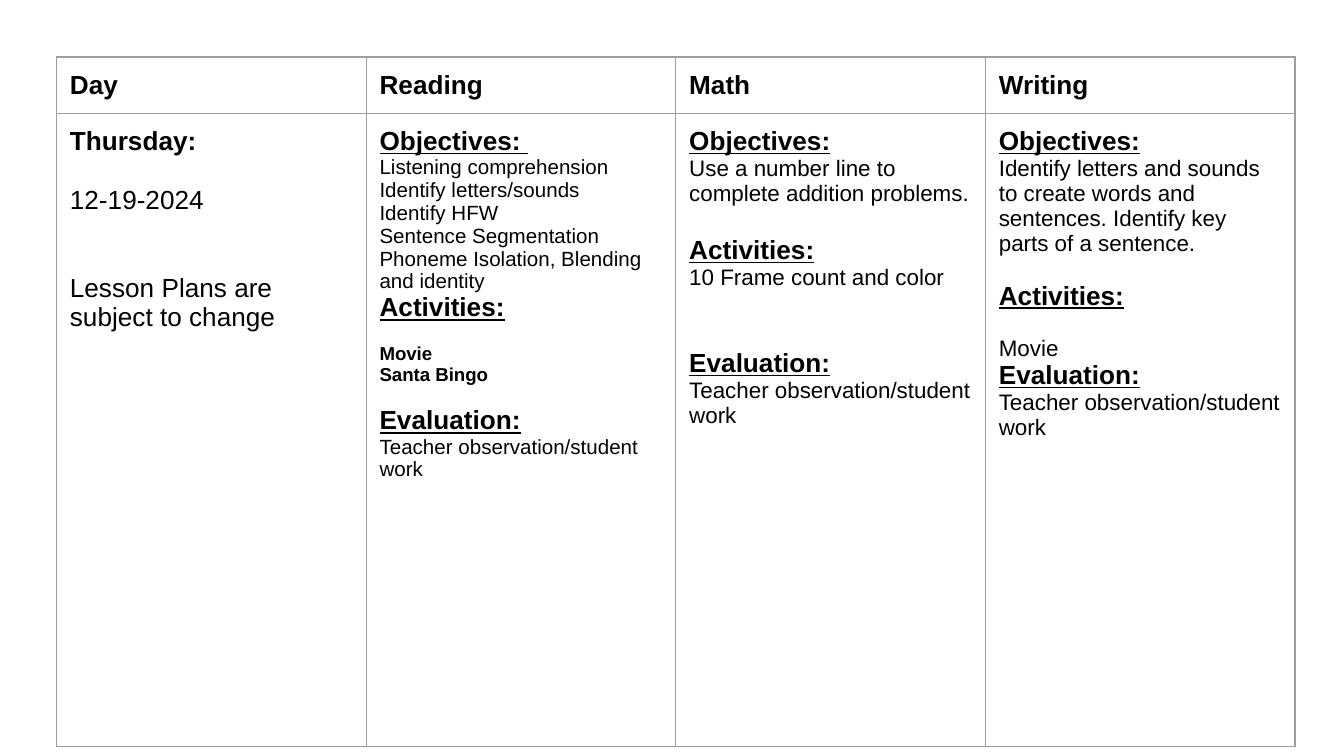
from lxml.etree import SubElement
from pptx import Presentation
from pptx.dml.color import RGBColor as Rgb
from pptx.enum.text import MSO_ANCHOR as Anchor, PP_ALIGN as Align
from pptx.oxml import parse_xml
from pptx.oxml.ns import nsdecls, qn
from pptx.util import Inches, Pt

# A 16:9 page, divided into a fine grid of square units
PAGE_WIDTH = Inches(10)
PAGE_HEIGHT = PAGE_WIDTH * 9 // 16
GRID_COLUMNS = 1000
GRID_ROWS = GRID_COLUMNS * 9 / 16

# Text formats by role
FORMATS = {
    "title": {"size": Pt(14), "bold": True, "underline": False},
    "section": {"size": Pt(14), "bold": True, "underline": True},
    "note": {"size": Pt(14), "bold": False, "underline": False},
    "body": {"size": Pt(12), "bold": False, "underline": False},
    "small": {"size": Pt(11), "bold": False, "underline": False},
    "activity": {"size": Pt(10), "bold": True, "underline": False},
}


def hex_color(value):
    return Rgb.from_string(value)


def gap(*sizes):
    """Height in points of skipped lines of the given text sizes."""
    return round(1.12 * sum(sizes), 1)


class LessonPage:
    font = "Arial"
    ink = "000000"
    rule = "9E9E9E"
    rule_width = Pt(0.75)
    inset = Inches(0.1)

    def __init__(self, deck):
        self.slide = deck.slides.add_slide(deck.slide_layouts[6])

    def across(self, units):
        return round(PAGE_WIDTH * units / GRID_COLUMNS)

    def down(self, units):
        return round(PAGE_HEIGHT * units / GRID_ROWS)

    def table(self, left, top, column_width, row_heights, content):
        columns = len(content[0])
        plan = self.slide.shapes.add_table(
            len(content), columns, self.across(left), self.down(top),
            self.across(column_width * columns), self.down(sum(row_heights))).table
        plan.first_row = plan.horz_banding = False
        for column in plan.columns:
            column.width = self.across(column_width)
        for row, height, entries in zip(plan.rows, row_heights, content):
            row.height = self.down(height)
            for cell, lines in zip(row.cells, entries):
                self.cell(cell, lines)

    def cell(self, cell, lines):
        cell.fill.background()
        for side in ("left", "right", "top", "bottom"):
            setattr(cell, f"margin_{side}", self.inset)
        cell.vertical_anchor = Anchor.TOP
        self.borders(cell)
        frame = cell.text_frame
        for index, line in enumerate(lines):
            paragraph = frame.add_paragraph() if index else frame.paragraphs[0]
            self.line(paragraph, *line)

    def line(self, paragraph, role, text, space_before=0):
        paragraph.alignment = Align.LEFT
        paragraph.space_before = Pt(space_before)
        run = paragraph.add_run()
        run.text = text
        run.font.name = self.font
        run.font.color.rgb = hex_color(self.ink)
        for name, value in FORMATS[role].items():
            setattr(run.font, name, value)

    def borders(self, cell):
        properties = cell._tc.get_or_add_tcPr()
        for index, side in enumerate("LRTB"):
            edge = parse_xml(f'<a:ln{side} {nsdecls("a")} w="{self.rule_width}"/>')
            fill = SubElement(edge, qn("a:solidFill"))
            SubElement(fill, qn("a:srgbClr"), val=self.rule)
            properties.insert(index, edge)


# Wording of each column: role, text, space before
SUBJECTS = ["Day", "Reading", "Math", "Writing"]
OBJECTIVES = ("section", "Objectives:")
ACTIVITIES, EVALUATION = "Activities:", "Evaluation:"
OBSERVATION = "Teacher observation/student work"

day = [
    ("title", "Thursday:"),
    ("note", "12-19-2024", gap(14)),
    ("note", "Lesson Plans are subject to change", gap(14, 14)),
]
reading = [
    ("section", "Objectives: "),
    *[("small", goal) for goal in (
        "Listening comprehension", "Identify letters/sounds", "Identify HFW",
        "Sentence Segmentation", "Phoneme Isolation, Blending and identity")],
    ("section", ACTIVITIES),
    ("activity", "Movie", gap(10)),
    ("activity", "Santa Bingo"),
    ("section", EVALUATION, gap(10)),
    ("small", OBSERVATION),
]
math = [
    OBJECTIVES,
    ("body", "Use a number line to complete addition problems."),
    ("section", ACTIVITIES, gap(14)),
    ("body", "10 Frame count and color"),
    ("section", EVALUATION, gap(14, 14)),
    ("body", OBSERVATION),
]
writing = [
    OBJECTIVES,
    ("body", "Identify letters and sounds"),
    ("body", "to create words and"),
    ("body", "sentences. Identify key parts of a sentence."),
    ("section", ACTIVITIES, gap(12)),
    ("body", "Movie", gap(12)),
    ("section", EVALUATION),
    ("body", OBSERVATION),
]


def main():
    deck = Presentation()
    deck.slide_width, deck.slide_height = PAGE_WIDTH, PAGE_HEIGHT
    page = LessonPage(deck)

    # Lesson plan: subject headings above the day's plan
    headings = [[("title", subject)] for subject in SUBJECTS]
    page.table(42, 42.4, 230.4, (41, 471), [headings, [day, reading, math, writing]])

    deck.save("out.pptx")


if __name__ == "__main__":
    main()
